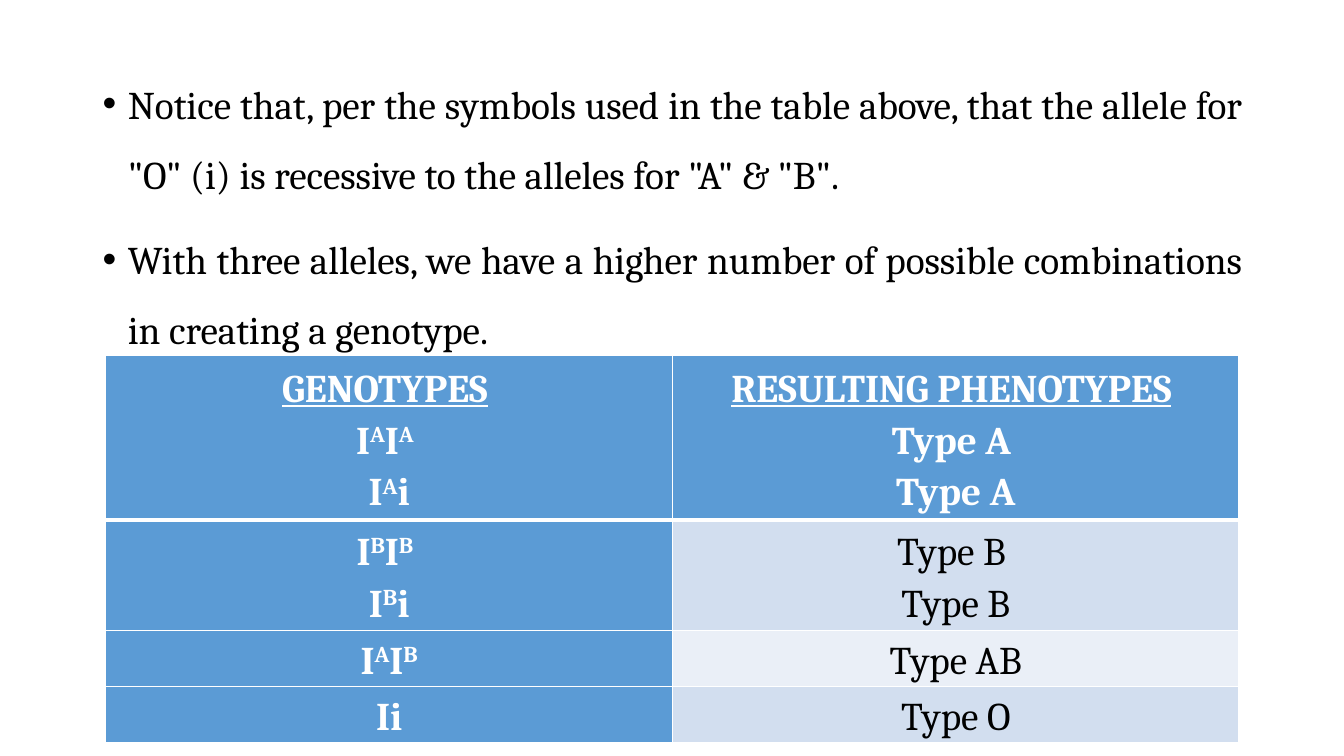
from lxml.etree import SubElement
from pptx import Presentation
from pptx.dml.color import RGBColor
from pptx.enum.text import MSO_ANCHOR, PP_ALIGN
from pptx.oxml.ns import qn
from pptx.util import Inches, Pt

THEME = {
    "font": "Cambria",
    "size": Pt(28),
    "black": RGBColor.from_string("000000"),
    "white": RGBColor.from_string("FFFFFF"),
    "header": RGBColor.from_string("5B9BD5"),
    "odd_band": RGBColor.from_string("D2DEEF"),
    "even_band": RGBColor.from_string("EAEFF7"),
}

BULLETS = [
    'Notice that, per the symbols used in the table above, that the allele for "O" (i) '
    'is recessive to the alleles for "A" & "B".',
    "With three alleles, we have a higher number of possible combinations in creating a genotype.",
]

# A caret raises the letter that follows it.
GENOTYPE_ROWS = [
    (["GENOTYPES ", "I^AI^A ", "I^Ai"], ["RESULTING PHENOTYPES ", "Type A ", "Type A"]),
    (["I^BI^B ", "I^Bi"], ["Type B ", "Type B"]),
    (["I^AI^B"], ["Type AB"]),
    (["Ii"], ["Type O"]),
]
ROW_HEIGHTS = [1.56, 1.04, 0.53, 0.53]


def add_run(paragraph, text, color, **extra):
    run = paragraph.add_run()
    run.text = text
    run.font.color.rgb = color
    values = {"name": THEME["font"], "size": THEME["size"], **extra}
    for name, value in values.items():
        setattr(run.font, name, value)
    return run


def add_border(cell, side, width):
    properties = cell._tc.get_or_add_tcPr()
    line = SubElement(properties, qn(f"a:ln{side}"), w=str(Pt(width)))
    fill = SubElement(line, qn("a:solidFill"))
    SubElement(fill, qn("a:srgbClr"), val=str(THEME["white"]))


presentation = Presentation()
presentation.slide_width = Inches(13.33)
presentation.slide_height = Inches(7.5)
slide = presentation.slides.add_slide(presentation.slide_layouts[6])

body = slide.shapes.add_textbox(Inches(0.92), Inches(0.51), Inches(11.5), Inches(6.25))
body.text_frame.word_wrap = True
for index, text in enumerate(BULLETS):
    paragraph = body.text_frame.paragraphs[0] if index == 0 else body.text_frame.add_paragraph()
    paragraph.alignment = PP_ALIGN.JUSTIFY
    paragraph.line_spacing = 1.5
    paragraph.space_before = Pt(10 if index else 0)
    properties = paragraph._p.get_or_add_pPr()
    properties.set("marL", str(Inches(0.25)))
    properties.set("indent", str(-Inches(0.25)))
    SubElement(properties, qn("a:buFont"), typeface="Arial")
    SubElement(properties, qn("a:buChar"), char="•")
    add_run(paragraph, text, THEME["black"])

table = slide.shapes.add_table(
    len(GENOTYPE_ROWS), 2, Inches(1.05), Inches(3.53), Inches(11.24), Inches(sum(ROW_HEIGHTS))
).table
table.first_col = True

cell_format = {"vertical_anchor": MSO_ANCHOR.MIDDLE}
for side in ("left", "right", "top", "bottom"):
    cell_format[f"margin_{side}"] = Inches(0.01)

for row_index, row in enumerate(GENOTYPE_ROWS):
    table.rows[row_index].height = Inches(ROW_HEIGHTS[row_index])
    for column_index, lines in enumerate(row):
        cell = table.cell(row_index, column_index)
        for name, value in cell_format.items():
            setattr(cell, name, value)
        for side in "LRTB":
            header_edge = (row_index, side) in ((0, "B"), (1, "T"))
            add_border(cell, side, 3 if header_edge else 1)

        is_header = row_index == 0 or column_index == 0
        band = "odd_band" if row_index % 2 else "even_band"
        cell.fill.solid()
        cell.fill.fore_color.rgb = THEME["header" if is_header else band]
        color = THEME["white" if is_header else "black"]

        paragraph = cell.text_frame.paragraphs[0]
        paragraph.alignment = PP_ALIGN.CENTER
        paragraph.line_spacing = 1.15
        for line_index, line in enumerate(lines):
            if line_index:
                paragraph.add_line_break()
            is_title = row_index == 0 and line_index == 0
            base, *raised_parts = line.split("^")
            add_run(paragraph, base.rstrip(), color, bold=is_header, underline=is_title)
            if base.endswith(" "):
                add_run(paragraph, " ", color, bold=is_header, underline=False)
            for part in raised_parts:
                raised = add_run(paragraph, part[0], color, bold=is_header)
                raised._r.get_or_add_rPr().set("baseline", "30000")
                if part[1:]:
                    add_run(paragraph, part[1:], color, bold=is_header)

presentation.save("out.pptx")
